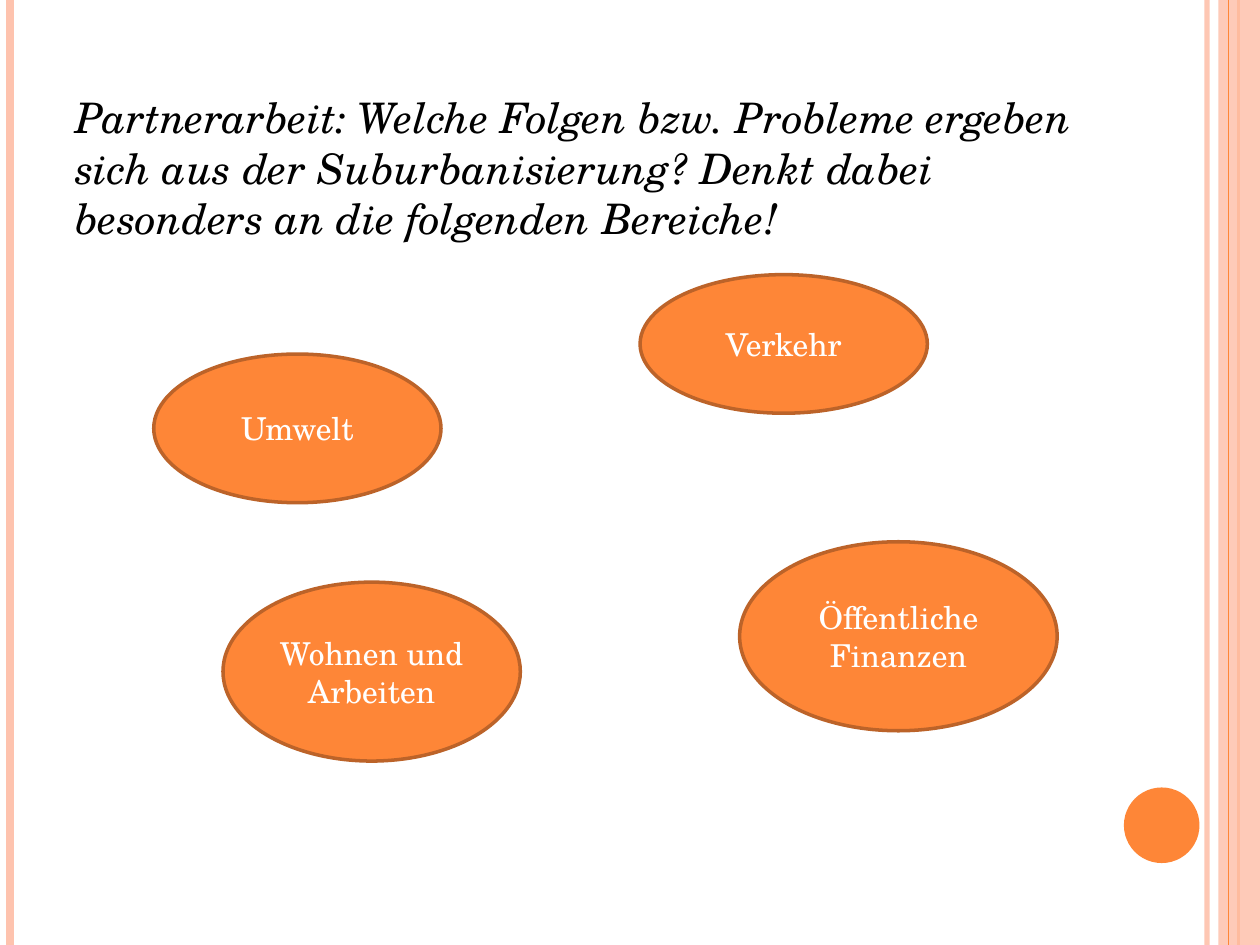
"""Build a slide asking for the consequences of suburbanisation in four areas."""
from lxml import etree
from pptx import Presentation
from pptx.dml.color import RGBColor
from pptx.enum import shapes, text
from pptx.oxml import ns
from pptx.util import Inches, Pt

ORANGE = RGBColor(0xFE, 0x86, 0x37)
BROWN = RGBColor(0xBC, 0x63, 0x29)
PEACH = RGBColor(0xFE, 0xC3, 0xAE)
BLACK = RGBColor(0, 0, 0)
WHITE = RGBColor(0xFF, 0xFF, 0xFF)
FONT = "TeX Gyre Schola"
WIDTH, HEIGHT = 10, 7.5

TASK = (
    "Partnerarbeit: Welche Folgen bzw. Probleme ergeben sich aus der "
    "Suburbanisierung? Denkt dabei besonders an die folgenden Bereiche!"
)
TOPICS = [
    ("Verkehr", (5.08, 2.18, 2.28, 1.1)),
    ("Öffentliche Finanzen", (5.87, 4.3, 2.52, 1.5)),
    ("Wohnen und Arbeiten", (1.77, 4.62, 2.36, 1.42)),
    ("Umwelt", (1.22, 2.81, 2.28, 1.18)),
]
STRIPES_BEHIND_BAND = [(9.58, PEACH, 3, 93), (0.08, PEACH, 4.5, 100), (9.83, ORANGE, 1.5, 100)]
BAND = (9.67, 0, 0.33, HEIGHT)
STRIPE_ON_BAND = (9.75, ORANGE, 0.75, 100)
DOT = (8.92, 6.25, 0.6, 0.6)


def set_opacity(element, percent):
    if percent < 100:
        color = element.find(".//" + ns.qn("a:srgbClr"))
        etree.SubElement(color, ns.qn("a:alpha"), val=str(percent * 1000))


def add_stripe(page, x, color, weight, opacity):
    stripe = page.shapes.add_connector(
        shapes.MSO_CONNECTOR.STRAIGHT, Inches(x), Inches(0), Inches(x), Inches(HEIGHT)
    )
    stripe.line.color.rgb = color
    stripe.line.width = Pt(weight)
    properties = stripe.element.spPr
    set_opacity(properties, opacity)
    etree.SubElement(properties, ns.qn("a:effectLst"))


def add_filled(page, kind, place, color, opacity=100):
    shape = page.shapes.add_shape(kind, *map(Inches, place))
    shape.shadow.inherit = False
    shape.fill.solid()
    shape.fill.fore_color.rgb = color
    set_opacity(shape.element.spPr, opacity)
    shape.line.fill.background()
    return shape


def write(shape, content, size, color, align, anchor, italic=False):
    frame = shape.text_frame
    frame.text = content
    frame.word_wrap = True
    frame.vertical_anchor = anchor
    para = frame.paragraphs[0]
    para.alignment = align
    font = para.runs[0].font
    font.name = FONT
    font.size = Pt(size)
    font.italic = italic
    font.color.rgb = color
    return para


def main():
    deck = Presentation()
    deck.slide_width, deck.slide_height = Inches(WIDTH), Inches(HEIGHT)
    page = deck.slides.add_slide(deck.slide_layouts[6])

    for stripe in STRIPES_BEHIND_BAND:
        add_stripe(page, *stripe)
    add_filled(page, shapes.MSO_SHAPE.RECTANGLE, BAND, PEACH, 87)
    add_stripe(page, *STRIPE_ON_BAND)
    add_filled(page, shapes.MSO_SHAPE.OVAL, DOT, ORANGE)

    box = page.shapes.add_textbox(*map(Inches, (0.5, 0.68, 8.17, 6.4)))
    para = write(box, TASK, 24, BLACK, text.PP_ALIGN.LEFT, text.MSO_ANCHOR.TOP, italic=True)
    para.space_before = Pt(6)

    for label, place in TOPICS:
        oval = add_filled(page, shapes.MSO_SHAPE.OVAL, place, ORANGE)
        oval.line.color.rgb = BROWN
        oval.line.width = Pt(2)
        write(oval, label, 18, WHITE, text.PP_ALIGN.CENTER, text.MSO_ANCHOR.MIDDLE)

    deck.save("out.pptx")


if __name__ == "__main__":
    main()
